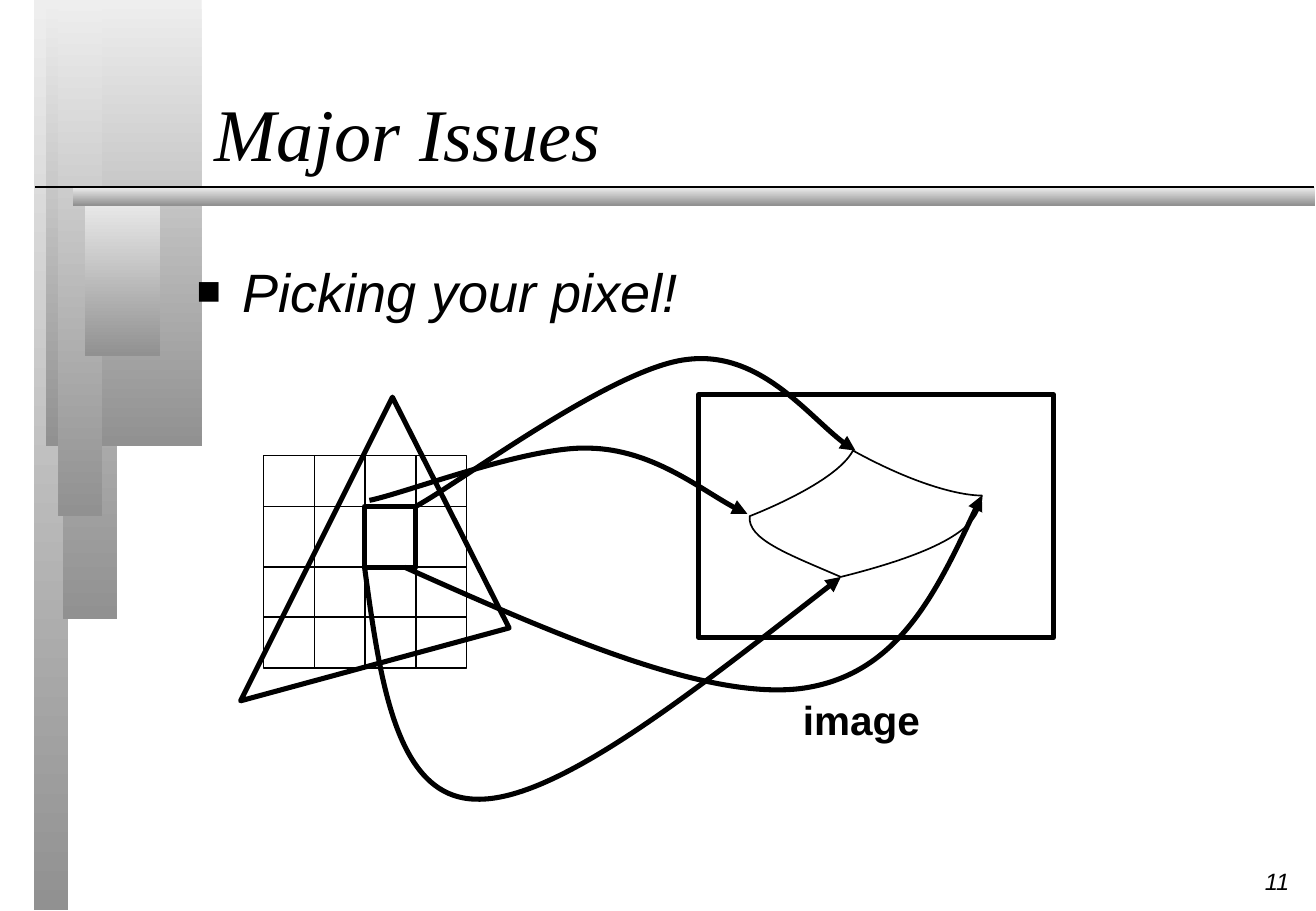
from lxml.etree import SubElement
from pptx import Presentation
from pptx.dml.color import RGBColor
from pptx.enum.shapes import MSO_CONNECTOR, MSO_SHAPE
from pptx.enum.text import MSO_ANCHOR, PP_ALIGN
from pptx.oxml.ns import qn
from pptx.util import Inches, Pt

BLACK = RGBColor(0, 0, 0)
LIGHT_GRAY = RGBColor(0xEE, 0xEE, 0xEE)
DARK_GRAY = RGBColor(0x91, 0x91, 0x91)
THIN, THICK = 1, 3

GRADIENT_BARS = [
    (0.28, 0, 0.28, 7.49),
    (0.52, 0, 0.44, 5.1),
    (0.38, 0, 1.28, 3.67),
    (0.48, 0, 0.36, 4.25),
    (0.7, 1.6, 0.62, 1.33),
    (0.6, 1.54, 10.22, 0.15),
]
HEADER_RULE = (0.29, 1.54, 10.81, 1.54)

TITLE = ("Major Issues", (1.67, 0.25, 8.42, 1.25))
BULLET = ("Picking your pixel!", (1.52, 2.08, 8.48, 4.58))
IMAGE_LABEL = ("image", (6.51, 5.67, 1.16, 0.5))
PAGE_NUMBER = ("11", (10.28, 7.09, 0.43, 0.33))

TRIANGLE = [(3.23, 3.27), (1.98, 5.77), (4.19, 5.17)]
PIXEL_GRID = (2.17, 3.75, 1.67, 1.75)
GRID_COLUMNS = 4
GRID_ROWS = [4.17, 4.67, 5.08]
IMAGE_FRAME = (5.75, 3.25, 2.92, 2)
PIXEL = (3, 4.17, 0.42, 0.5)
WARPED_PIXEL = [
    (6.17, 4.25), (6.15, 4.44), (6.48, 4.56), (6.92, 4.75),
    (7.92, 4.5), (8.07, 4.28), (8.08, 4.08),
    (8.08, 4.08), (7.73, 4.1), (7.02, 3.71),
    (6.88, 3.98), (6.17, 4.25), (6.17, 4.25),
]
CORNER_ARROWS = [
    [(3.04, 4.12), (3.34, 4.06), (4.34, 3.67), (4.85, 3.69),
     (5.37, 3.7), (5.88, 4.12), (6.15, 4.23)],
    [(3.42, 4.17), (3.79, 3.97), (5.04, 3.03), (5.65, 2.96),
     (6.25, 2.88), (6.75, 3.55), (7.04, 3.71)],
    [(3, 4.67), (3.13, 5.62), (3.26, 6.57), (3.92, 6.58),
     (4.57, 6.6), (5.74, 5.67), (6.92, 4.75)],
    [(3.33, 4.67), (4.56, 5.22), (5.79, 5.76), (6.58, 5.67),
     (7.38, 5.57), (7.73, 4.83), (8.08, 4.08)],
]

presentation = Presentation()
presentation.slide_width = Inches(10.83)
presentation.slide_height = Inches(7.5)
slide = presentation.slides.add_slide(presentation.slide_layouts[6])


def inches(values):
    return [Inches(value) for value in values]


def set_outline(shape, width):
    shape.shadow.inherit = False
    shape.fill.background()
    shape.line.color.rgb = BLACK
    shape.line.width = Pt(width)


def add_rectangle(box):
    return slide.shapes.add_shape(MSO_SHAPE.RECTANGLE, *inches(box))


def add_frame(box, width):
    shape = add_rectangle(box)
    set_outline(shape, width)
    return shape


def add_gradient_bar(box):
    shape = add_rectangle(box)
    shape.shadow.inherit = False
    shape.line.fill.background()
    shape.fill.gradient()
    shape.fill.gradient_angle = 270
    for stop, color, position in zip(shape.fill.gradient_stops, (LIGHT_GRAY, DARK_GRAY), (0, 1)):
        stop.color.rgb = color
        stop.position = position


def add_rule(ends):
    line = slide.shapes.add_connector(MSO_CONNECTOR.STRAIGHT, *inches(ends))
    line.line.color.rgb = BLACK
    line.line.width = Pt(THIN)
    SubElement(line._element.spPr, qn("a:effectLst"))
    return line


def add_outline(points, width, close=False, curved=False, arrow=False):
    start, *others = [inches(point) for point in points]
    builder = slide.shapes.build_freeform(*start)
    builder.add_line_segments(others, close=close)
    shape = builder.convert_to_shape()
    set_outline(shape, width)
    if curved:
        segments = list(shape._element.iter(qn("a:lnTo")))
        for first, second, third in zip(segments[::3], segments[1::3], segments[2::3]):
            first.tag = qn("a:cubicBezTo")
            for segment in (second, third):
                first.append(segment[0])
                segment.getparent().remove(segment)
    line_element = shape.line._get_or_add_ln()
    SubElement(line_element, qn("a:round"))
    if arrow:
        SubElement(line_element, qn("a:tailEnd"), type="triangle")


def add_text(content, size, font="Arial", italic=False, bold=False,
             align=PP_ALIGN.LEFT, anchor=MSO_ANCHOR.MIDDLE, wrap=True):
    text, box = content
    frame = slide.shapes.add_textbox(*inches(box)).text_frame
    frame.word_wrap = wrap
    frame.vertical_anchor = anchor
    paragraph = frame.paragraphs[0]
    paragraph.alignment = align
    run = paragraph.add_run()
    run.text = text
    run.font.name = font
    run.font.size = Pt(size)
    run.font.italic = italic
    run.font.bold = bold
    run.font.color.rgb = BLACK
    return paragraph


def add_bullet(paragraph):
    paragraph.space_before = Pt(3)
    properties = paragraph._p.get_or_add_pPr()
    properties.set("marL", str(Inches(0.38)))
    properties.set("indent", str(Inches(-0.38)))
    color = SubElement(properties, qn("a:buClr"))
    SubElement(color, qn("a:srgbClr"), val=str(BLACK))
    SubElement(properties, qn("a:buSzPct"), val="75000")
    SubElement(properties, qn("a:buFont"), typeface="Arial")
    SubElement(properties, qn("a:buChar"), char="■")


def add_pixel_grid():
    left, top, width, height = PIXEL_GRID
    grid = add_frame(PIXEL_GRID, THIN)
    for column in range(1, GRID_COLUMNS):
        x = left + column * width / GRID_COLUMNS
        line = add_rule((x, top, x, top + height))
        if column * 2 == GRID_COLUMNS:
            line.begin_connect(grid, 0)
            line.end_connect(grid, 2)
    for y in GRID_ROWS:
        add_rule((left, y, left + width, y))


for bar in GRADIENT_BARS:
    add_gradient_bar(bar)
add_rule(HEADER_RULE)
add_text(PAGE_NUMBER, 14, italic=True, align=PP_ALIGN.RIGHT, wrap=False)
add_text(TITLE, 44, font="Times New Roman", italic=True, anchor=MSO_ANCHOR.BOTTOM)
add_bullet(add_text(BULLET, 32, italic=True, anchor=MSO_ANCHOR.TOP))

add_outline(TRIANGLE, THICK, close=True)
add_pixel_grid()
add_frame(IMAGE_FRAME, THICK)
add_outline(WARPED_PIXEL, THIN, close=True, curved=True)
add_text(IMAGE_LABEL, 24, bold=True, align=PP_ALIGN.CENTER, wrap=False)
add_frame(PIXEL, THICK)
for arrow_points in CORNER_ARROWS:
    add_outline(arrow_points, THICK, curved=True, arrow=True)

presentation.save("out.pptx")
